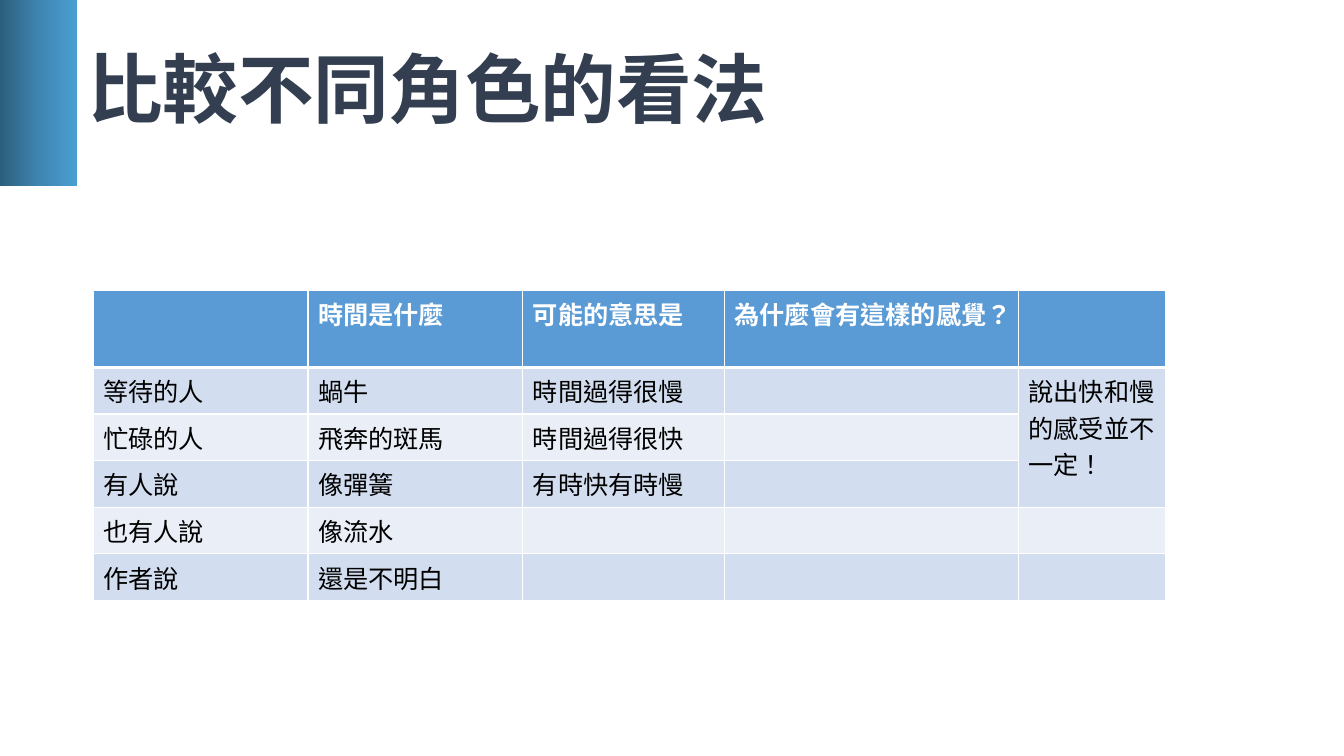
from copy import deepcopy

from pptx import Presentation
from pptx.dml.color import RGBColor
from pptx.enum import shapes, text
from pptx.oxml import ns, xmlchemy as xml
from pptx.util import Pt

HUES = {
    "dark": "2C5E7C", "mid": "3F85B1", "light": "4A9ED2",
    "title": "333F50", "head": "5B9BD5", "odd": "D2DEEF",
    "even": "EAEFF7", "white": "FFFFFF", "black": "000000",
}
WIDTHS = [153.5, 153.5, 144, 210, 105]
HEAD_H, ROW_H = 55, 33.3
ROWS = [
    ["", "時間是什麼", "可能的意思是", "為什麼會有這樣的感覺？", ""],
    ["等待的人", "蝸牛", "時間過得很慢", "", "說出快和慢的感受並不一定！"],
    ["忙碌的人", "飛奔的斑馬", "時間過得很快", "", ""],
    ["有人說", "像彈簧", "有時快有時慢", "", ""],
    ["也有人說", "像流水", "", "", ""],
    ["作者說", "還是不明白", "", "", ""],
]


def rgb(hue):
    return RGBColor.from_string(HUES[hue])


def write(frame, words, size=18, font="Calibri", east=None, hue="black",
          bold=False, space=None):
    para = frame.paragraphs[0]
    para.alignment = text.PP_ALIGN.LEFT
    para.line_spacing = space
    run = para.add_run()
    run.text = words
    run.font.size = Pt(size)
    run.font.name = font
    run.font.bold = bold
    run.font.color.rgb = rgb(hue)
    props = run._r.get_or_add_rPr()
    props.set("lang", "zh-TW")
    if east:
        face = xml.OxmlElement("a:ea")
        face.set("typeface", east)
        props.find(ns.qn("a:latin")).addnext(face)


def add_band(slide):
    band = slide.shapes.add_shape(shapes.MSO_SHAPE.RECTANGLE,
                                  0, 0, Pt(55), Pt(133))
    band.shadow.inherit = False
    band.line.fill.background()
    band.fill.gradient()
    band.fill.gradient_angle = 0
    # A third stop for the middle of the gradient
    stops = band._element.spPr.find(".//" + ns.qn("a:gsLst"))
    stops.insert(1, deepcopy(stops[0]))
    marks = [(0, "dark"), (0.5, "mid"), (1, "light")]
    for stop, (place, hue) in zip(band.fill.gradient_stops, marks):
        stop.position = place
        stop.color.rgb = rgb(hue)


def set_title(slide, words):
    title = slide.shapes.title
    title.left, title.top = Pt(55), 0
    title.width, title.height = Pt(828), Pt(133)
    frame = title.text_frame
    frame.word_wrap = True
    frame.auto_size = text.MSO_AUTO_SIZE.NONE
    frame.vertical_anchor = text.MSO_ANCHOR.MIDDLE
    write(frame, words, size=54, font="Noto Sans CJK SC",
          east="Noto Sans CJK SC", hue="title", bold=True, space=0.9)


def add_edge(cell, side, width):
    edge = xml.OxmlElement("a:ln" + side)
    edge.set("w", str(Pt(width)))
    paint = xml.OxmlElement("a:solidFill")
    color = xml.OxmlElement("a:srgbClr")
    color.set("val", HUES["white"])
    paint.append(color)
    edge.append(paint)
    cell._tc.get_or_add_tcPr().append(edge)


def add_grid(slide):
    high = HEAD_H + ROW_H * (len(ROWS) - 1)
    grid = slide.shapes.add_table(len(ROWS), len(WIDTHS), Pt(66.5), Pt(207.5),
                                  Pt(sum(WIDTHS)), Pt(high)).table
    for col, width in zip(grid.columns, WIDTHS):
        col.width = Pt(width)
    for i, words in enumerate(ROWS):
        head = i == 0
        grid.rows[i].height = Pt(HEAD_H if head else ROW_H)
        fill = "head" if head else "odd" if i % 2 else "even"
        for j, word in enumerate(words):
            cell = grid.cell(i, j)
            # A thick line parts the header from the body
            thick = {"T": 3 if i == 1 else 1, "B": 3 if head else 1}
            for side in "LRTB":
                add_edge(cell, side, thick.get(side, 1))
            cell.fill.solid()
            cell.fill.fore_color.rgb = rgb(fill)
            if word:
                write(cell.text_frame, word, bold=head,
                      hue="white" if head else "black")
    # The remark spans the first three speakers
    grid.cell(1, 4).merge(grid.cell(3, 4))


def main():
    deck = Presentation()
    deck.slide_width, deck.slide_height = Pt(960), Pt(540)
    slide = deck.slides.add_slide(deck.slide_layouts[5])
    add_band(slide)
    set_title(slide, "比較不同角色的看法")
    add_grid(slide)
    deck.save("out.pptx")


if __name__ == "__main__":
    main()
